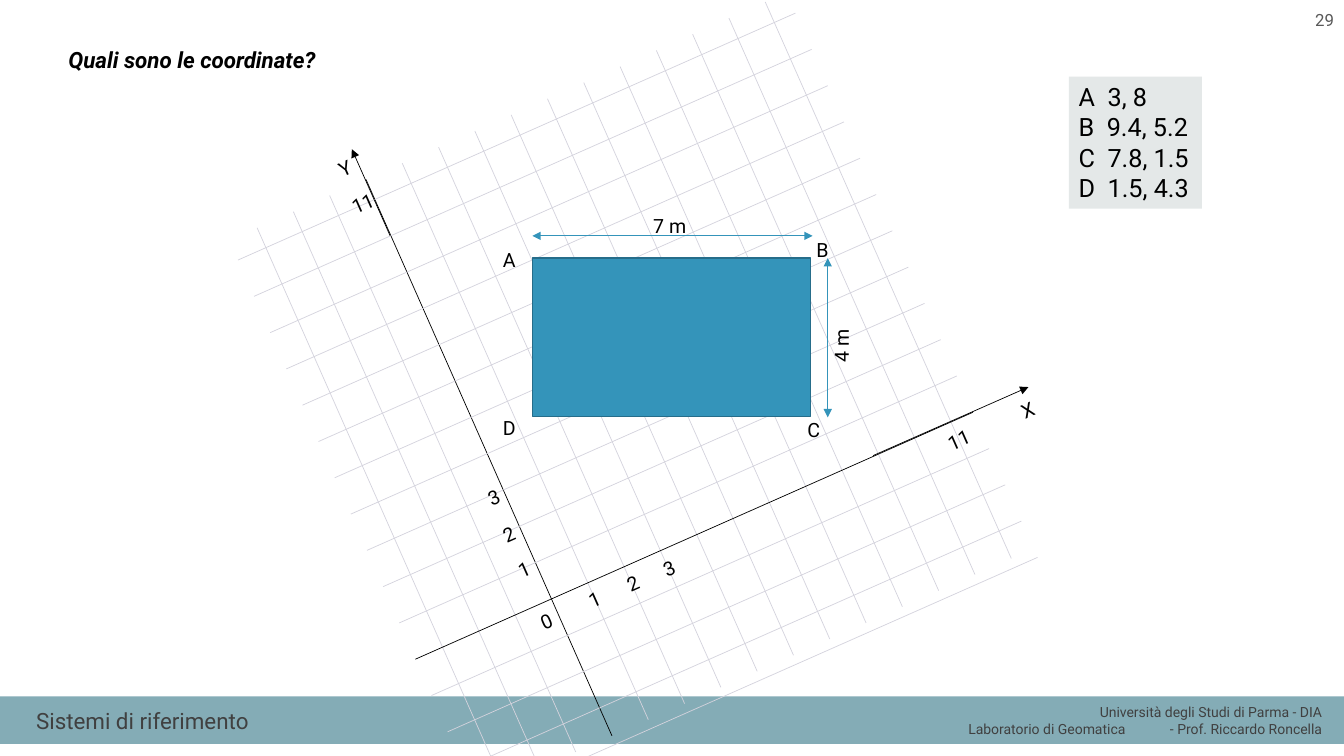
from dataclasses import dataclass
from typing import Optional

from lxml.etree import SubElement
from pptx import Presentation
from pptx.dml.color import RGBColor
from pptx.enum.shapes import MSO_CONNECTOR as Link, MSO_SHAPE as Form
from pptx.enum.text import MSO_ANCHOR as Anchor, MSO_AUTO_SIZE as Fit, PP_ALIGN as Align
from pptx.oxml.ns import qn
from pptx.util import Emu, Pt

BLACK = RGBColor(0x00, 0x00, 0x00)
DARK = RGBColor(0x40, 0x40, 0x40)
GRAY = RGBColor(0x59, 0x59, 0x59)
PALE = RGBColor(0xE4, 0xE8, 0xE8)
GRID = RGBColor(0xD4, 0xD3, 0xDD)
TEAL = RGBColor(0x84, 0xAC, 0xB6)
BLUE = RGBColor(0x34, 0x94, 0xBA)
EDGE = RGBColor(0x26, 0x6D, 0x8A)
FONT = "Roboto"
SCALE = 9144
TILT = 336.1


@dataclass
class Label:
    text: str
    left: int
    top: int
    width: int
    height: int = 34
    size: int = 14
    color: RGBColor = BLACK
    turn: float = 0
    align: Align = Align.LEFT
    anchor: Anchor = Anchor.TOP
    grow: bool = True
    wrap: bool = True
    heavy: bool = False
    space: float = 1.0
    fill: Optional[RGBColor] = None


@dataclass
class Line:
    left: int
    top: int
    right: int
    low: int
    color: RGBColor = GRID
    head: bool = False
    tail: bool = False


@dataclass
class Box:
    left: int
    top: int
    width: int
    height: int
    fill: RGBColor
    edge: Optional[RGBColor] = None


def px(num: int) -> Emu:
    return Emu(num * SCALE)


def draw_label(slide, item: Label) -> None:
    box = slide.shapes.add_textbox(
        px(item.left), px(item.top), px(item.width), px(item.height))
    box.rotation = item.turn
    if item.fill is not None:
        box.fill.solid()
        box.fill.fore_color.rgb = item.fill
    frame = box.text_frame
    frame.text = item.text
    frame.word_wrap = item.wrap
    frame.auto_size = Fit.SHAPE_TO_FIT_TEXT if item.grow else Fit.NONE
    frame.vertical_anchor = item.anchor
    for para in frame.paragraphs:
        para.alignment = item.align
        para.line_spacing = item.space
        font = para.font
        font.name = FONT
        font.size = Pt(item.size)
        font.color.rgb = item.color
        font.bold = font.italic = item.heavy


def draw_line(slide, item: Line) -> None:
    link = slide.shapes.add_connector(
        Link.STRAIGHT, px(item.left), px(item.top), px(item.right), px(item.low))
    link.line.color.rgb = item.color
    link.line.width = Pt(0.5)
    stroke = link.line._get_or_add_ln()
    for tag, shown in (("a:headEnd", item.head), ("a:tailEnd", item.tail)):
        if shown:
            SubElement(stroke, qn(tag)).set("type", "triangle")
    SubElement(link._element.spPr, qn("a:effectLst"))


def draw_box(slide, item: Box) -> None:
    rect = slide.shapes.add_shape(
        Form.RECTANGLE, px(item.left), px(item.top), px(item.width), px(item.height))
    rect.shadow.inherit = False
    rect.fill.solid()
    rect.fill.fore_color.rgb = item.fill
    if item.edge is None:
        rect.line.fill.background()
    else:
        rect.line.color.rgb = item.edge
        rect.line.width = Pt(1)


def draw_grid(slide) -> None:
    for i in range(15):
        x, y = 255 + 36 * i, 226 - 16 * i
        draw_line(slide, Line(x, y, x + 244, y + 552, BLACK if i == 3 else GRID))
    for i in range(16):
        x, y = 236 + 16 * i, 258 + 36 * i
        draw_line(slide, Line(x, y, x + 553, y - 245, BLACK if i == 11 else GRID))


FRAME = [
    Label("Università degli Studi di Parma - DIA\n"
          "Laboratorio di Geomatica\t- Prof. Riccardo Roncella",
          906, 693, 415, 44, 10, DARK, align=Align.RIGHT),
    Label("Sistemi di riferimento", 26, 695, 727, 40, 16, DARK,
          anchor=Anchor.MIDDLE, grow=False),
    Label("Quali sono le coordinate?", 58, 46, 360, 33, 16,
          grow=False, heavy=True, space=0.8),
    Label("A  3, 8\nB  9.4, 5.2\nC  7.8, 1.5\nD  1.5, 4.3",
          1060, 76, 132, 131, 18, wrap=False, fill=PALE),
    Label("29", 1260, 0, 73, 40, 12, GRAY,
          align=Align.RIGHT, anchor=Anchor.MIDDLE, grow=False),
]
AXES = [
    Line(387, 234, 349, 148, BLACK, tail=True),
    Line(866, 452, 1020, 384, BLACK, tail=True),
]
TICKS = [
    Label("0", 527, 602, 20, turn=TILT),
    Label("Y", 327, 152, 20, turn=TILT),
    Label("1", 505, 550, 20, turn=TILT),
    Label("2", 490, 515, 20, turn=TILT),
    Label("3", 475, 479, 20, turn=TILT),
    Label("11", 335, 186, 46, turn=TILT, align=Align.RIGHT),
    Label("X", 1004, 392, 20, turn=TILT),
    Label("1", 575, 580, 20, turn=TILT),
    Label("2", 613, 564, 20, turn=TILT),
    Label("3", 649, 549, 20, turn=TILT),
    Label("11", 930, 418, 49, turn=TILT),
]
SIZES = [
    Line(528, 234, 806, 234, BLUE, head=True, tail=True),
    Line(821, 256, 821, 414, BLUE, head=True, tail=True),
]
MARKS = [
    Label("A", 489, 241, 93),
    Label("B", 800, 231, 93),
    Label("C", 791, 410, 93),
    Label("D", 489, 408, 93),
    Label("7 m", 638, 207, 93),
    Label("4 m", 788, 306, 93, turn=270),
]


def main() -> None:
    deck = Presentation()
    deck.slide_width, deck.slide_height = px(1333), px(750)
    slide = deck.slides.add_slide(deck.slide_layouts[6])
    draw_box(slide, Box(0, 691, 1333, 47, TEAL))
    for item in FRAME:
        draw_label(slide, item)
    draw_grid(slide)
    for item in AXES:
        draw_line(slide, item)
    for item in TICKS:
        draw_label(slide, item)
    draw_box(slide, Box(528, 256, 276, 157, BLUE, EDGE))
    for item in SIZES:
        draw_line(slide, item)
    for item in MARKS:
        draw_label(slide, item)
    deck.save("out.pptx")


if __name__ == "__main__":
    main()
